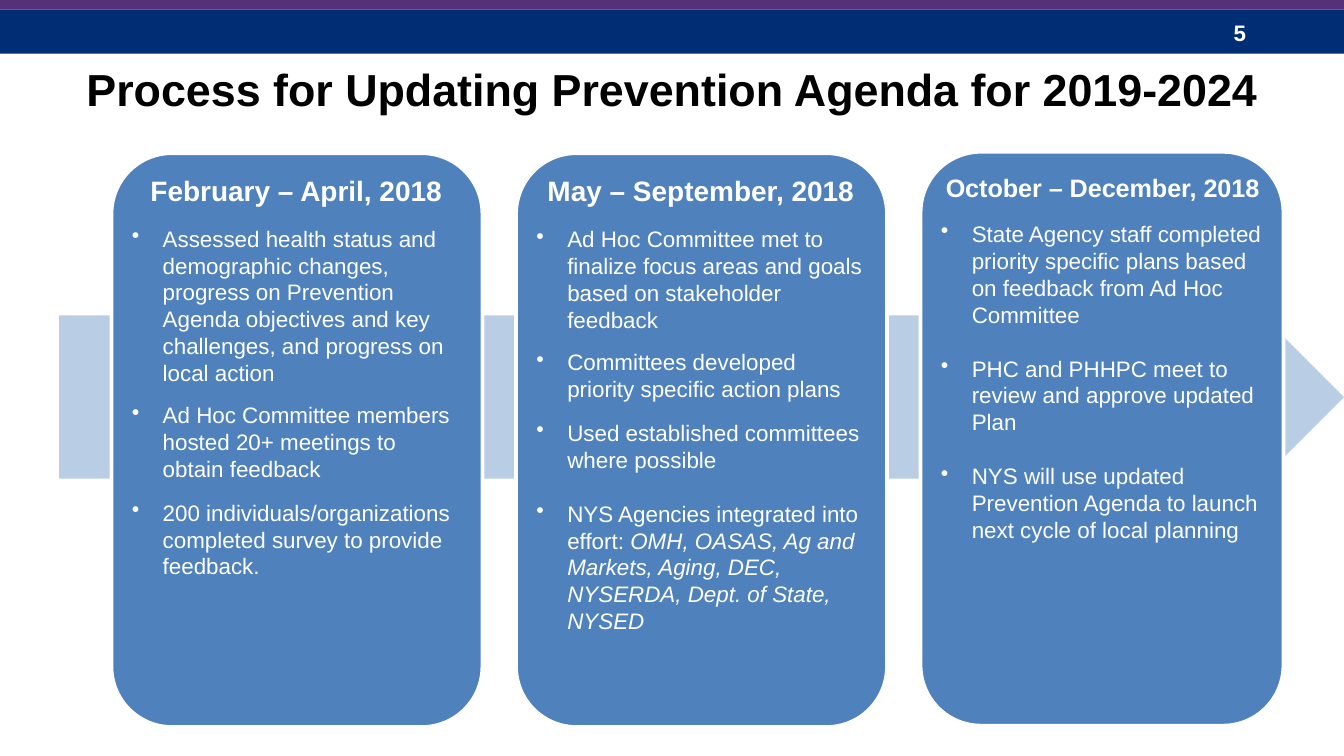
from lxml.etree import SubElement
from pptx import Presentation
from pptx.dml.color import RGBColor
from pptx.enum.shapes import MSO_SHAPE
from pptx.enum.text import MSO_ANCHOR, PP_ALIGN
from pptx.oxml.ns import qn
from pptx.util import Inches, Pt

WIDE = 10
HIGH = WIDE * 9 / 16
COLORS = {"navy": "002D73", "plum": "553278", "pale": "B9CDE5",
          "blue": "4F81BD", "white": "FFFFFF", "black": "000000"}
TITLE = "Process for Updating Prevention Agenda for 2019-2024"
PAGE = "5"

# Each item: gap before in points, text, optional italic tail
STAGES = [
    {"head": "February – April, 2018", "size": 15,
     "top": 1.14, "width": 2.76, "right": 0.03,
     "items": [
         (9.5, "Assessed health status and demographic changes, progress on "
               "Prevention Agenda objectives and key challenges, and progress "
               "on local action"),
         (8.2, "Ad Hoc Committee members hosted 20+ meetings to obtain feedback"),
         (9, "200 individuals/organizations completed survey to provide feedback.")]},
    {"head": "May – September, 2018", "size": 15,
     "top": 1.14, "width": 2.76, "right": 0.03,
     "items": [
         (9.9, "Ad Hoc Committee met to finalize focus areas and goals based "
               "on stakeholder feedback"),
         (8.2, "Committees developed priority specific action plans"),
         (9, "Used established committees where possible"),
         (14.5, "NYS Agencies integrated into effort: ",
          "OMH, OASAS, Ag and Markets, Aging, DEC, NYSERDA, Dept. of State, NYSED")]},
    {"head": "October – December, 2018", "size": 13.5,
     "top": 1.13, "width": 2.7, "right": 0.01,
     "items": [
         (9.5, "State Agency staff completed priority specific plans based on "
               "feedback from Ad Hoc Committee"),
         (14.5, "PHC and PHHPC meet to review and approve updated Plan"),
         (14.5, "NYS will use updated Prevention Agenda to launch next cycle "
                "of local planning")]},
]
LEFT, PITCH, TALL = 0.83, 3.01, 4.27
ROUND, PAD, HANG = 0.45, 0.15, 0.23

deck = Presentation()
deck.slide_width, deck.slide_height = Inches(WIDE), Inches(HIGH)
slide = deck.slides.add_slide(deck.slide_layouts[6])


def color(name):
    return RGBColor.from_string(COLORS[name])


def shape(kind, box, fill, line=None):
    item = slide.shapes.add_shape(kind, *map(Inches, box))
    item.shadow.inherit = False
    item.fill.solid()
    item.fill.fore_color.rgb = color(fill)
    if line:
        item.line.color.rgb = color(line)
        item.line.width = Pt(2)
    else:
        item.line.fill.background()
    return item


def frame(item, pads, anchor=MSO_ANCHOR.TOP):
    """Set wrap, anchor and left, top, right, bottom insets."""
    body = item.text_frame
    body.word_wrap = True
    body.vertical_anchor = anchor
    (body.margin_left, body.margin_top,
     body.margin_right, body.margin_bottom) = map(Inches, pads)
    return body


def write(body, text, size=12, ink="white", bold=False, align=PP_ALIGN.LEFT,
          gap=None, tail="", bullet=False):
    """Fill the first paragraph, or add one when a gap is given."""
    para = body.paragraphs[0] if gap is None else body.add_paragraph()
    para.alignment = align
    if gap is not None:
        para.space_before = Pt(gap)
    if bullet:
        props = para._p.get_or_add_pPr()
        props.set("marL", str(Inches(HANG)))
        props.set("indent", str(-Inches(HANG)))
        SubElement(props, qn("a:buChar")).set("char", "•")
    for part, slant in ((text, False), (tail, True)):
        if part:
            run = para.add_run()
            run.text = part
            font = run.font
            font.name, font.size = "Arial", Pt(size)
            font.bold, font.italic = bold, slant
            font.color.rgb = color(ink)


def label(box, pads, anchor, text, **style):
    item = slide.shapes.add_textbox(*map(Inches, box))
    write(frame(item, pads, anchor), text, bold=True, **style)


shape(MSO_SHAPE.RECTANGLE, (0, 0.07, WIDE, 0.33), "navy")
shape(MSO_SHAPE.RECTANGLE, (0, -0.02, WIDE, 0.09), "plum")
label((9.08, 0.1, 0.75, 0.3), (0.1, 0.05, 0.1, 0.06), MSO_ANCHOR.MIDDLE, PAGE)
label((0, 0.01, WIDE, 0.81), (0.1, 0.49, 0.1, 0), MSO_ANCHOR.TOP, TITLE,
      size=24, ink="black", align=PP_ALIGN.CENTER)
shape(MSO_SHAPE.RIGHT_ARROW, (0.44, 1.74, 9.56, 2.43), "pale")

inner = PAD - 0.29 * ROUND  # the rounded shape already insets its text
for col, stage in enumerate(STAGES):
    wide = stage["width"]
    card = shape(MSO_SHAPE.ROUNDED_RECTANGLE,
                 (LEFT + col * PITCH, stage["top"], wide, TALL), "blue", "white")
    card.adjustments[0] = ROUND / wide
    body = frame(card, (inner, inner, stage["right"], inner))
    write(body, stage["head"], size=stage["size"], bold=True,
          align=PP_ALIGN.CENTER)
    for gap, text, *tail in stage["items"]:
        write(body, text, gap=gap, tail="".join(tail), bullet=True)

deck.save("out.pptx")
